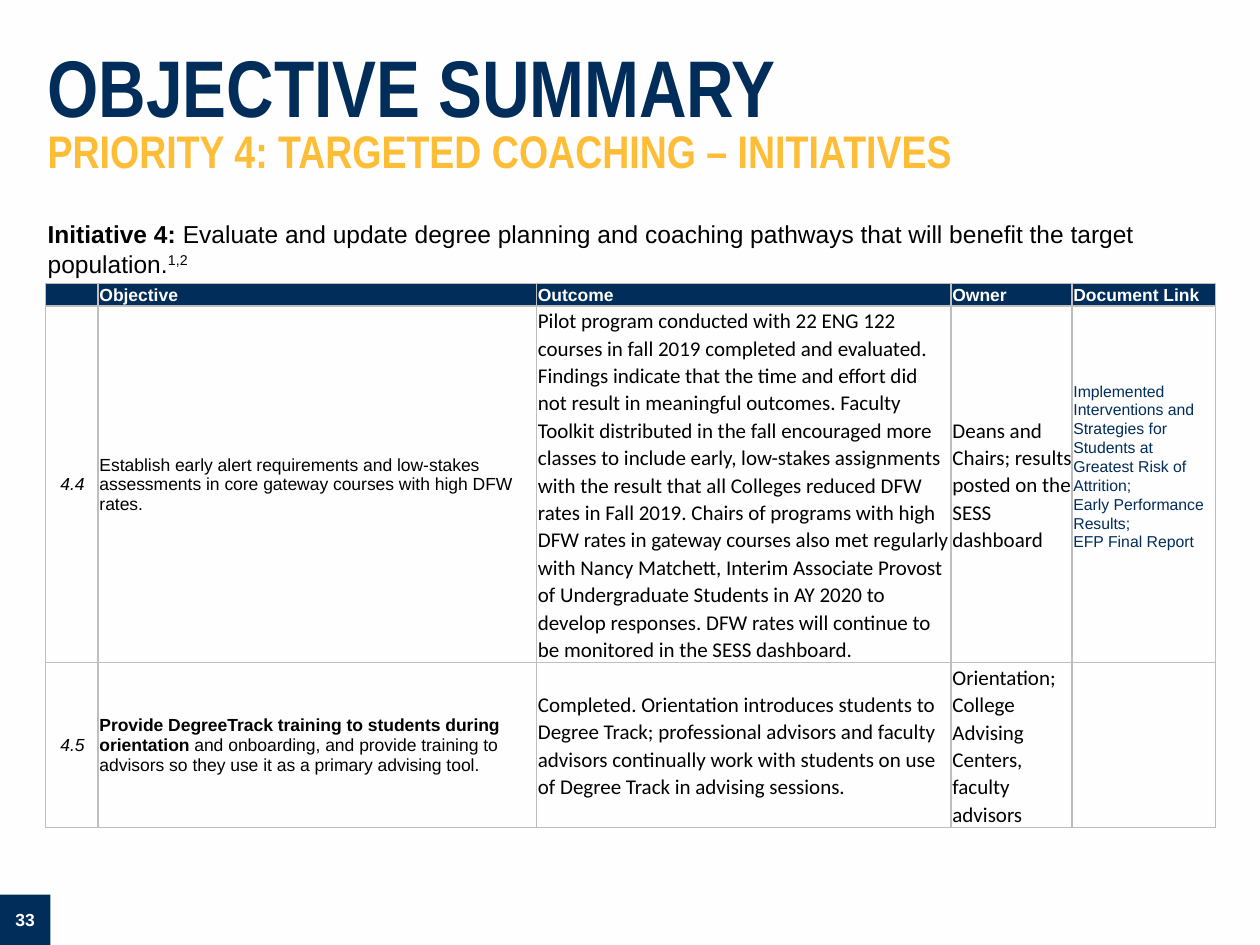
from lxml import etree
from pptx import Presentation
from pptx import util as u
from pptx.dml.color import RGBColor
from pptx.enum import shapes, text
from pptx.oxml import ns

NAVY, GOLD, WHITE, BLACK, GREY = "012D5B", "FEBD36", "FEFEFE", "000000", "BEBEBE"
MID = text.MSO_ANCHOR.MIDDLE
MIDDLE = text.PP_ALIGN.CENTER


def color(code):
    return RGBColor.from_string(code)


def write(para, words, hue, **font):
    """Add a run in the given colour and font values."""
    run = para.add_run()
    run.text = words
    run.font.color.rgb = color(hue)
    for name, value in font.items():
        setattr(run.font, name, value)
    return run


prs = Presentation()
prs.slide_width, prs.slide_height = u.Inches(10), u.Inches(7.5)
slide = prs.slides.add_slide(prs.slide_layouts[6])
slide.background.fill.solid()
slide.background.fill.fore_color.rgb = color(WHITE)

# Page number
side = u.Inches(0.4)
badge = slide.shapes.add_shape(
    shapes.MSO_SHAPE.RECTANGLE, 0, prs.slide_height - side, side, side)
badge.shadow.inherit = False
badge.fill.solid()
badge.fill.fore_color.rgb = color(NAVY)
badge.line.fill.background()
frame = badge.text_frame
frame.margin_left = frame.margin_right = 0
frame.vertical_anchor = MID
para = frame.paragraphs[0]
para.alignment = MIDDLE
write(para, "33", WHITE, name="Arial", size=u.Pt(10), bold=True)

# Title
box = slide.shapes.add_textbox(u.Inches(0.28), u.Inches(0.31), u.Inches(9.72), u.Inches(1.23))
frame = box.text_frame
frame.word_wrap = True
frame.vertical_anchor = MID
for edge in ("left", "right", "top", "bottom"):
    setattr(frame, f"margin_{edge}", u.Inches(0.1))
para = frame.paragraphs[0]
para.line_spacing = 0.8
head = {"name": "Arial Narrow", "bold": True}
write(para, "OBJECTIVE SUMMARY", NAVY, size=u.Pt(45.9), **head)
para.add_line_break()
write(para, "PRIORITY 4: TARGETED COACHING – INITIATIVES", GOLD, size=u.Pt(26.1), **head)

# Initiative
box = slide.shapes.add_textbox(u.Inches(0.28), u.Inches(1.69), u.Inches(9.45), u.Inches(0.9))
box.text_frame.word_wrap = True
para = box.text_frame.paragraphs[0]
body = {"name": "Arial", "size": u.Pt(14)}
write(para, "Initiative 4: ", BLACK, bold=True, **body)
write(para, "Evaluate and update degree planning and coaching pathways that will "
      "benefit the target population.", BLACK, **body)
note = write(para, "1,2", BLACK, **body)
note._r.get_or_add_rPr().set("baseline", "30000")

# Table: each cell is a list of paragraphs
rows = [
    [[], ["Objective"], ["Outcome"], ["Owner"], ["Document Link"]],
    [["4.4"],
     ["Establish early alert requirements and low-stakes assessments in core gateway "
      "courses with high DFW rates."],
     ["Pilot program conducted with 22 ENG 122 courses in fall 2019 completed and "
      "evaluated. Findings indicate that the time and effort did not result in meaningful "
      "outcomes. Faculty Toolkit distributed in the fall encouraged more classes to include "
      "early, low-stakes assignments with the result that all Colleges reduced DFW rates in "
      "Fall 2019. Chairs of programs with high DFW rates in gateway courses also met "
      "regularly with Nancy Matchett, Interim Associate Provost of Undergraduate Students "
      "in AY 2020 to develop responses. DFW rates will continue to be monitored in the "
      "SESS dashboard."],
     ["Deans and Chairs; results posted on the SESS dashboard"],
     ["Implemented Interventions and Strategies for Students at Greatest Risk of Attrition;",
      "Early Performance Results;", "EFP Final Report"]],
    [["4.5"],
     ["and onboarding, and provide training to advisors so they use it as a primary "
      "advising tool."],
     ["Completed. Orientation introduces students to Degree Track; professional advisors "
      "and faculty advisors continually work with students on use of Degree Track in "
      "advising sessions."],
     ["Orientation; College Advising Centers, faculty advisors"],
     []],
]
leads = {(2, 1): "Provide DegreeTrack training to students during orientation "}
lifts = {(1, 4): 0.29}  # bottom margins that raise centred text
small = {"name": "Arial", "size": u.Pt(10)}
large = {"name": "Calibri", "size": u.Pt(12)}
looks = [(BLACK, {**small, "italic": True}), (BLACK, small), (BLACK, large),
         (BLACK, large), (NAVY, {"name": "Arial", "size": u.Pt(9)})]
wide = [0.42, 3.48, 3.29, 0.96, 1.14]
high = [0.17, 2.83, 1.31]

table = slide.shapes.add_table(
    len(high), len(wide), u.Inches(0.36), u.Inches(2.25),
    u.Inches(sum(wide)), u.Inches(sum(high))).table
for col, width in zip(table.columns, wide):
    col.width = u.Inches(width)
for row, height in zip(table.rows, high):
    row.height = u.Inches(height)

for r, line in enumerate(rows):
    for c, parts in enumerate(line):
        cell = table.cell(r, c)
        cell.fill.solid()
        cell.fill.fore_color.rgb = color(NAVY if r == 0 else WHITE)
        cell.vertical_anchor = MID
        cell.margin_left = cell.margin_top = u.Inches(0.01)
        cell.margin_right = 0
        cell.margin_bottom = u.Inches(lifts.get((r, c), 0))
        hue, font = looks[c] if r else (WHITE, {**small, "bold": True})
        frame = cell.text_frame
        for i, words in enumerate(parts):
            para = frame.add_paragraph() if i else frame.paragraphs[0]
            if c == 0:
                para.alignment = MIDDLE
            if r and c > 1:
                para.line_spacing = 1.07
            if (r, c) in leads:
                write(para, leads[r, c], hue, bold=True, **font)
            write(para, words, hue, **font)
        if not parts:  # keeps an empty cell from stretching its row
            end = etree.SubElement(frame.paragraphs[0]._p, ns.qn("a:endParaRPr"))
            end.set("sz", "1000")
        props = cell._tc.get_or_add_tcPr()
        for i, edge in enumerate("LRTB"):
            rule = etree.Element(ns.qn(f"a:ln{edge}"), w=str(u.Pt(1)))
            fill = etree.SubElement(rule, ns.qn("a:solidFill"))
            etree.SubElement(fill, ns.qn("a:srgbClr"), val=GREY)
            props.insert(i, rule)

prs.save("out.pptx")
